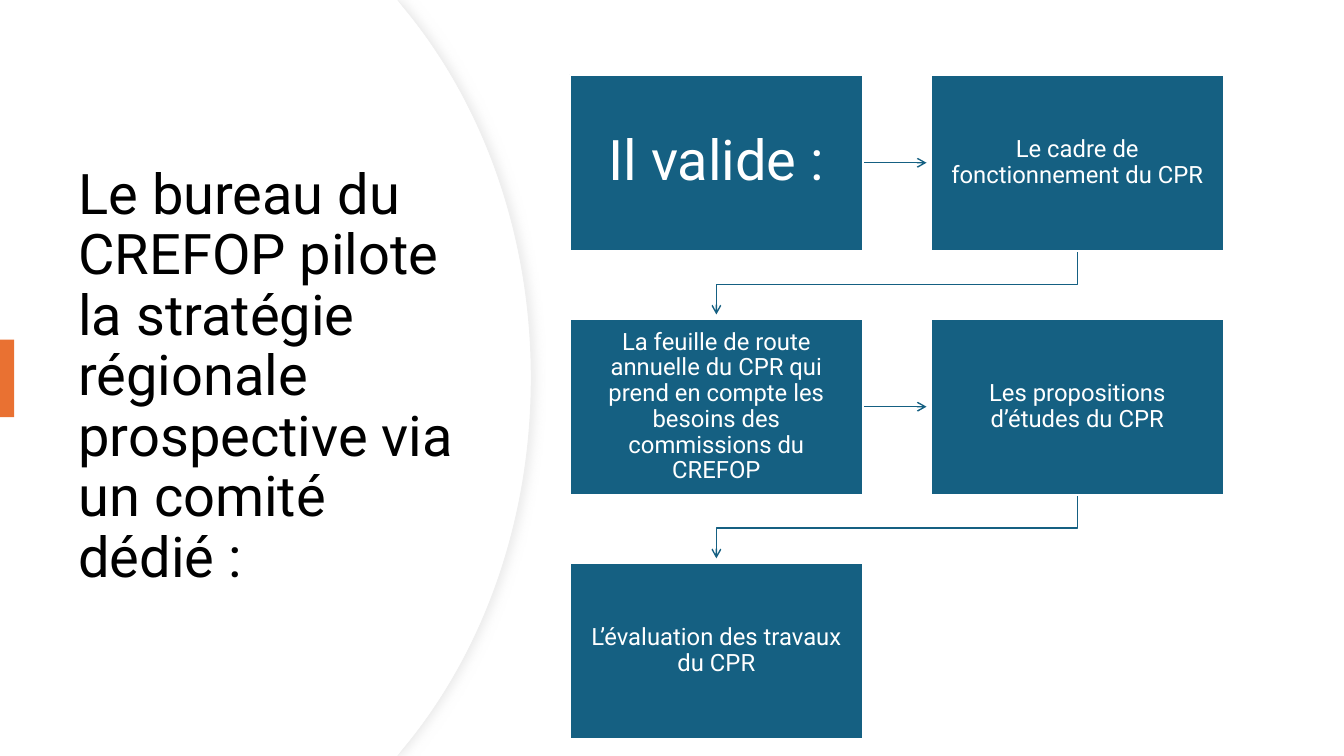
from lxml.etree import SubElement
from pptx import Presentation
from pptx.dml.color import RGBColor
from pptx.enum.shapes import MSO_SHAPE
from pptx.enum.text import MSO_ANCHOR, PP_ALIGN
from pptx.oxml.ns import qn
from pptx.util import Inches, Pt

COLORS = {"white": "FFFFFF", "black": "000000", "blue": "156082",
          "orange": "E97132", "edge": "EFEFEF", "shadow": "D9D9D9"}
FONT = "Roboto"
SLIDE_W, SLIDE_H = 13.33, 7.5

TITLE = ("Le bureau du CREFOP pilote la stratégie régionale prospective "
         "via un comité dédié :")
STEPS = [
    ("Il valide :", 40),
    ("Le cadre de fonctionnement du CPR", 17),
    ("La feuille de route annuelle du CPR qui prend en compte les besoins "
     "des commissions du CREFOP", 17),
    ("Les propositions d’études du CPR", 17),
    ("L’évaluation des travaux du CPR", 17),
]


def rgb(name):
    return RGBColor.from_string(COLORS[name])


def paint(sp, fill=None, line=None, width=1):
    sp.shadow.inherit = False
    if fill:
        sp.fill.solid()
        sp.fill.fore_color.rgb = rgb(fill)
    else:
        sp.fill.background()
    if line:
        sp.line.color.rgb = rgb(line)
        sp.line.width = Pt(width)
    else:
        sp.line.fill.background()


def write(sp, text, size, color, align):
    tf = sp.text_frame
    tf.word_wrap = True
    tf.vertical_anchor = MSO_ANCHOR.MIDDLE
    tf.text = text
    p = tf.paragraphs[0]
    p.alignment = align
    p.line_spacing = 0.9
    r = p.runs[0]
    r.font.name = FONT
    r.font.size = Pt(size)
    r.font.color.rgb = rgb(color)


def outline(s, points, close):
    points = [(Inches(x), Inches(y)) for x, y in points]
    builder = s.shapes.build_freeform(*points[0])
    builder.add_line_segments(points[1:], close=close)
    return builder.convert_to_shape()


def path_of(sp):
    return next(sp._element.iter(qn("a:path")))


def curve_segments(sp, first):
    """Turn three line segments, from index first, into one Bezier curve."""
    lines = path_of(sp).findall(qn("a:lnTo"))[first:first + 3]
    curve = lines[0]
    for line in lines[1:]:
        curve.append(line[0])
        line.getparent().remove(line)
    curve.tag = qn("a:cubicBezTo")


def add_curved_panel(s, width, height):
    """White panel whose right edge bulges out to the given width."""
    shoulder = width - 1.26
    upper = [(shoulder, 0.08), (width - 0.48, 1.02), (width, 2.32)]
    lower = [(x, height - y) for x, y in reversed(upper)]
    sp = outline(s, [(0, 0), (3.94, 0), *upper, (width, height / 2), *lower,
                     (3.94, height), (0, height)], True)
    for first in (5, 2):
        curve_segments(sp, first)
    return sp


def add_shadow(sp):
    effects = sp._element.spPr.find(qn("a:effectLst"))
    shadow = SubElement(effects, qn("a:outerShdw"), blurRad=str(Pt(7)),
                        dist=str(Pt(3)), dir="0", algn="l", rotWithShape="0")
    color = SubElement(shadow, qn("a:srgbClr"), val=COLORS["shadow"])
    SubElement(color, qn("a:alpha"), val="50000")


def add_arrow(s, points):
    sp = outline(s, points, False)
    paint(sp, line="blue")
    SubElement(sp.line._get_or_add_ln(), qn("a:tailEnd"), type="arrow")
    return sp


def title_region(s, left, top, width, height):
    # Curved background: shadowed edge, then plain face
    edge = add_curved_panel(s, 5.27, SLIDE_H)
    paint(edge, "white", "edge", 0.75)
    add_shadow(edge)
    paint(add_curved_panel(s, 5.26, SLIDE_H), "white")

    # Title and accent tab
    box = s.shapes.add_textbox(Inches(left), Inches(top), Inches(width), Inches(height))
    write(box, TITLE, 40, "black", PP_ALIGN.LEFT)
    tab = s.shapes.add_shape(MSO_SHAPE.RECTANGLE, 0, Inches(3.37),
                             Inches(0.14), Inches(0.77))
    paint(tab, "orange")


def add_step(s, x, y, w, h, text, size):
    sp = s.shapes.add_shape(MSO_SHAPE.RECTANGLE, Inches(x), Inches(y),
                            Inches(w), Inches(h))
    paint(sp, "blue", "white", 1.5)
    write(sp, text, size, "white", PP_ALIGN.CENTER)
    tf = sp.text_frame
    tf.margin_left = tf.margin_right = Inches(0.14)
    tf.margin_top = tf.margin_bottom = Inches(0.15)


def add_straight_arrow(s, x1, x2, y, band=0.1):
    """Level arrow running through the middle of a thin band."""
    sp = add_arrow(s, [(x1, y), (x2, y)])
    sp.top, sp.height = Inches(y - band / 2), Inches(band)
    path = path_of(sp)
    path.set("h", str(Inches(band)))
    for pt in path.iter(qn("a:pt")):
        pt.set("y", str(Inches(band / 2)))


def add_return_arrow(s, x1, y1, x2, y2):
    bend = y1 + 0.33
    add_arrow(s, [(x1, y1), (x1, bend), (x2, bend), (x2, y2)])


def steps_region(s, left, top, width, height):
    """Two-column flow of steps, read row by row."""
    w, h, tip_gap = 2.91, 1.75, 0.04
    col_step, row_step = width - w, (height - h) / 2
    for i, (text, size) in enumerate(STEPS):
        row, col = divmod(i, 2)
        x, y = left + col * col_step, top + row * row_step
        if i < len(STEPS) - 1:
            if col == 0:
                add_straight_arrow(s, x + w, x + col_step - tip_gap, y + h / 2)
            else:
                add_return_arrow(s, x + w / 2, y + h,
                                 left + w / 2, y + row_step - tip_gap)
        add_step(s, x, y, w, h, text, size)


def main():
    prs = Presentation()
    prs.slide_width, prs.slide_height = Inches(SLIDE_W), Inches(SLIDE_H)
    s = prs.slides.add_slide(prs.slide_layouts[6])
    title_region(s, 0.68, 1.27, 3.94, 4.95)
    steps_region(s, 5.65, 0.74, 6.49, 6.59)
    prs.save("out.pptx")


if __name__ == "__main__":
    main()
